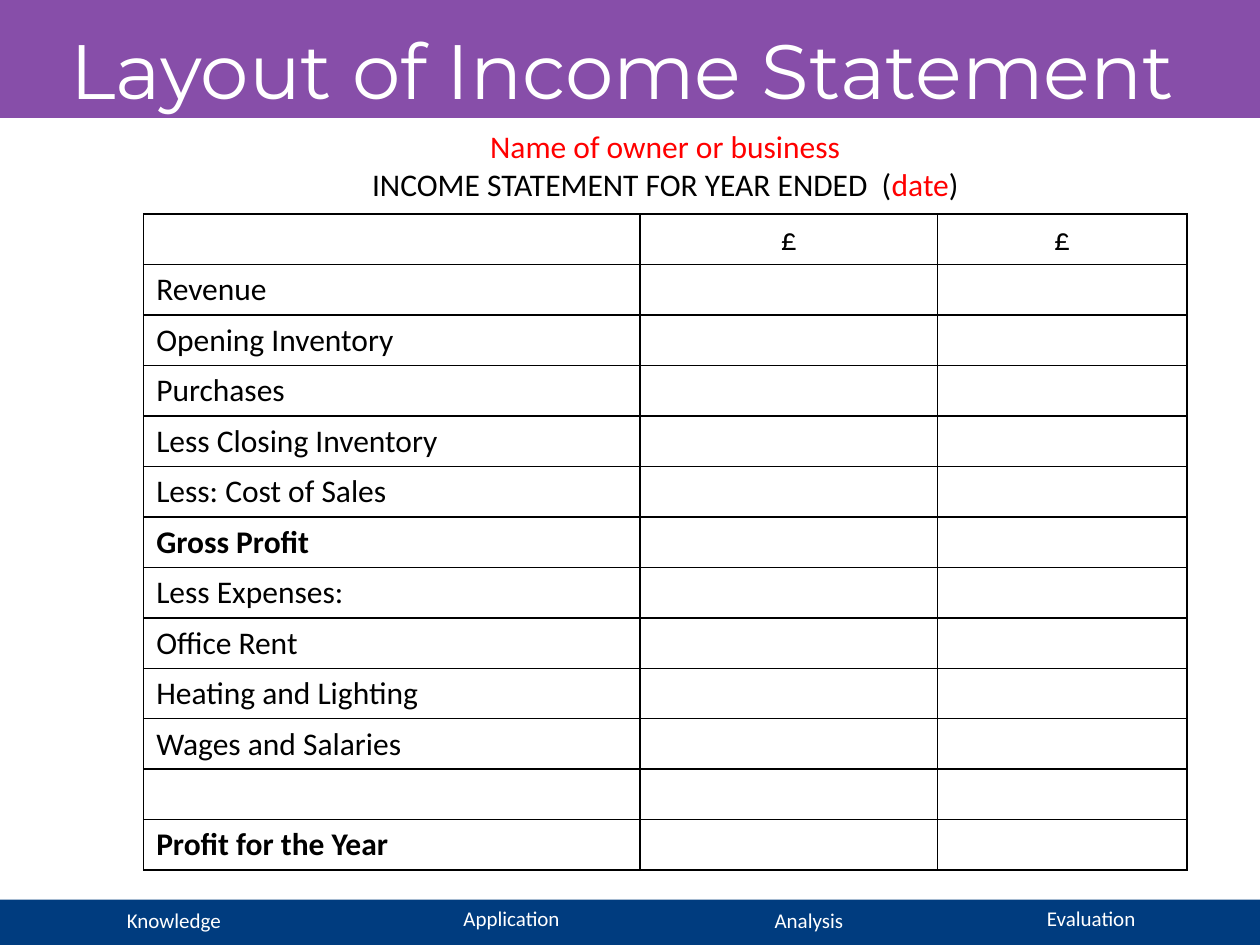
from lxml import etree
from pptx import Presentation
from pptx.dml.color import RGBColor
from pptx.enum.shapes import MSO_SHAPE
from pptx.enum.text import MSO_ANCHOR, PP_ALIGN
from pptx.oxml.ns import qn
from pptx.util import Pt

RECTANGLE = MSO_SHAPE.RECTANGLE
CENTER, LEFT = PP_ALIGN.CENTER, PP_ALIGN.LEFT
TOP, MIDDLE = MSO_ANCHOR.TOP, MSO_ANCHOR.MIDDLE

COLORS = {
    "banner": "874EA9",
    "footer": "003C7F",
    "white": "FFFFFF",
    "black": "000000",
    "red": "FF0000",
}
TITLE = {"name": "Montserrat", "size": Pt(44)}
BODY = {"name": "Calibri", "size": Pt(18), "bold": False}
TOTAL = {**BODY, "bold": True}
FOOTER = {"name": "Calibri", "size": Pt(12)}

HEADING = [
    [("Name of owner or business", "red")],
    [("INCOME STATEMENT FOR YEAR ENDED  (", "black"), ("date", "red"), (")", "black")],
]
STAGES = [
    ("Knowledge", 2.88, 514.8),
    ("Application", 195.84, 514.08),
    ("Analysis", 365.76, 514.8),
    ("Evaluation", 527.04, 514.08),
]
ENTRIES = [
    "", "Revenue", "Opening Inventory", "Purchases", "Less Closing Inventory",
    "Less: Cost of Sales", "Gross Profit", "Less Expenses:", "Office Rent",
    "Heating and Lighting", "Wages and Salaries", "", "Profit for the Year",
]
TOTALS = {"Gross Profit", "Profit for the Year"}
COLUMN_WIDTHS = [283.68, 169.92, 142.56]
ROW_HEIGHT = 28.8


def color(name):
    return RGBColor.from_string(COLORS[name])


def set_font(font, style, color_name):
    for attribute, value in style.items():
        setattr(font, attribute, value)
    font.color.rgb = color(color_name)


def write_lines(frame, lines, style, alignment=CENTER):
    for index, spans in enumerate(lines):
        para = frame.add_paragraph() if index else frame.paragraphs[0]
        para.alignment = alignment
        for text, color_name in spans:
            span = para.add_run()
            span.text = text
            set_font(span.font, style, color_name)


def add_bar(page, top, height, color_name):
    bar = page.shapes.add_shape(RECTANGLE, 0, Pt(top), Pt(720), Pt(height))
    bar.shadow.inherit = False
    bar.fill.solid()
    bar.fill.fore_color.rgb = color(color_name)
    bar.line.fill.background()
    return bar


def add_text(page, left, top, width, height, lines, style):
    box = page.shapes.add_textbox(Pt(left), Pt(top), Pt(width), Pt(height))
    frame = box.text_frame
    frame.word_wrap = True
    frame.vertical_anchor = TOP
    write_lines(frame, lines, style)


def add_borders(cell):
    properties = cell._tc.get_or_add_tcPr()
    for index, side in enumerate(("lnL", "lnR", "lnT", "lnB")):
        edge = etree.Element(qn(f"a:{side}"), w=str(Pt(1)))
        fill = etree.SubElement(edge, qn("a:solidFill"))
        etree.SubElement(fill, qn("a:srgbClr"), val=COLORS["black"])
        properties.insert(index, edge)


def add_statement(page):
    frame = page.shapes.add_table(
        len(ENTRIES), len(COLUMN_WIDTHS), Pt(82.08), Pt(122.4),
        Pt(sum(COLUMN_WIDTHS)), Pt(ROW_HEIGHT * len(ENTRIES)))
    table = frame.table
    table.first_row = table.horz_banding = False
    for column, width in zip(table.columns, COLUMN_WIDTHS):
        column.width = Pt(width)
    for row_index, entry in enumerate(ENTRIES):
        table.rows[row_index].height = Pt(ROW_HEIGHT)
        amount = "" if row_index else "£"
        style = TOTAL if entry in TOTALS else BODY
        for column_index, text in enumerate((entry, amount, amount)):
            cell = table.cell(row_index, column_index)
            cell.fill.background()
            cell.vertical_anchor = MIDDLE
            add_borders(cell)
            if text:
                alignment = CENTER if column_index else LEFT
                write_lines(cell.text_frame, [[(text, "black")]], style, alignment)


def main():
    deck = Presentation()
    deck.slide_width, deck.slide_height = Pt(720), Pt(540)
    page = deck.slides.add_slide(deck.slide_layouts[6])

    banner = add_bar(page, 0, 66.24, "banner")
    banner.line.color.rgb = color("banner")
    banner.line.width = Pt(2)
    add_bar(page, 514.08, 25.92, "footer")
    for stage, left, top in STAGES:
        add_text(page, left, top, 192.96, 21.6, [[(stage, "white")]], FOOTER)

    add_text(page, -8.64, 9.36, 728.64, 56.88,
             [[("Layout of Income Statement", "white")]], TITLE)
    add_statement(page)
    add_text(page, 82.08, 69.12, 596.16, 51.12, HEADING, BODY)
    deck.save("out.pptx")


if __name__ == "__main__":
    main()
